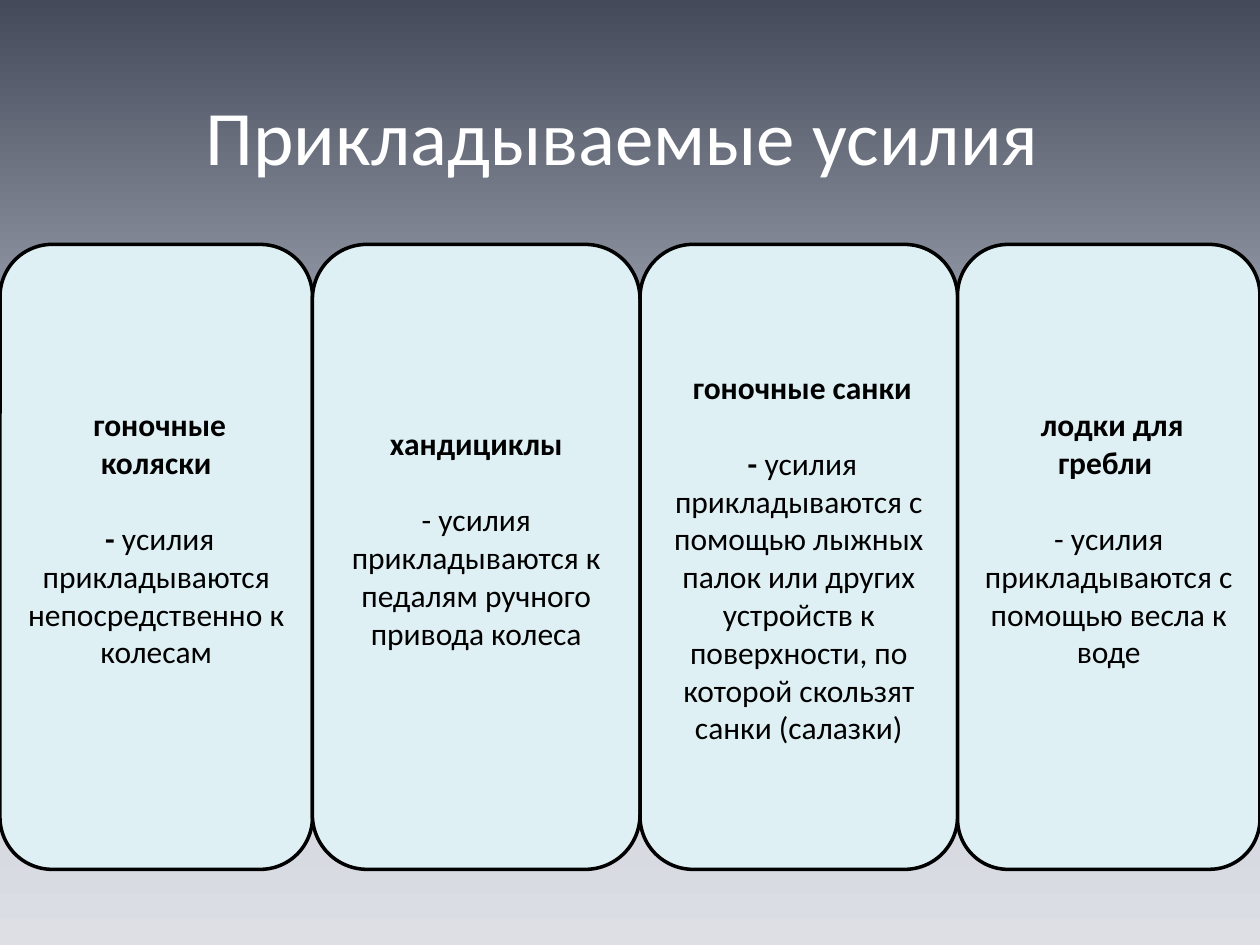
import copy

import pptx
import pptx.dml.color
import pptx.enum.shapes
import pptx.enum.text
import pptx.oxml.ns
import pptx.util

Inches, Pt = pptx.util.Inches, pptx.util.Pt
RGBColor = pptx.dml.color.RGBColor

WHITE = RGBColor(0xFF, 0xFF, 0xFF)
BLACK = RGBColor(0x00, 0x00, 0x00)
CARD_FILL = RGBColor(0xDF, 0xF0, 0xF5)
BACKGROUND = [
    (0, RGBColor(0x44, 0x4A, 0x5A)),
    (0.5, RGBColor(0xBA, 0xC0, 0xCC)),
    (1, RGBColor(0xDD, 0xDF, 0xE5)),
]

TITLE_FONT = {"name": "Calibri", "size": Pt(44)}
BODY_FONT = {"name": "Calibri", "size": Pt(18)}
LINE_GAP = Pt(22)
CARD_TOP, CARD_HEIGHT = 1.94, 4.96

# Width, heading, dash, its weight, description, extra space at the bottom
CARDS = [
    (2.48, " гоночные коляски", " - ", True,
     "усилия прикладываются непосредственно к колесам", LINE_GAP),
    (2.6, " хандициклы ", "- ", False,
     "усилия прикладываются к педалям ручного привода колеса", LINE_GAP),
    (2.52, " гоночные санки", " - ", True,
     "усилия прикладываются с помощью лыжных палок или других устройств "
     "к поверхности, по которой скользят санки (салазки)", 0),
    (2.4, " лодки для гребли ", "- ", False,
     "усилия прикладываются с помощью весла к воде", LINE_GAP),
]


def set_background(s):
    fill = s.background.fill
    fill.gradient()
    fill.gradient_angle = 270
    # A new gradient has two stops; add the middle one
    stops = s.element.find(".//" + pptx.oxml.ns.qn("a:gsLst"))
    stops.insert(1, copy.deepcopy(stops[0]))
    for stop, (position, color) in zip(fill.gradient_stops, BACKGROUND):
        stop.position = position
        stop.color.rgb = color


def add_run(p, text, font, color, bold=False):
    r = p.add_run()
    r.text = text
    for name, value in {**font, "bold": bold}.items():
        setattr(r.font, name, value)
    r.font.color.rgb = color


def prepare_text(sp):
    tf = sp.text_frame
    tf.word_wrap = True
    tf.vertical_anchor = pptx.enum.text.MSO_ANCHOR.MIDDLE
    return tf


def add_title(s, text):
    sp = s.shapes.add_textbox(Inches(0.51), Inches(0.44), Inches(9), Inches(1.25))
    p = prepare_text(sp).paragraphs[0]
    p.alignment = pptx.enum.text.PP_ALIGN.CENTER
    add_run(p, text, TITLE_FONT, WHITE)


def add_card(s, left, width, heading, dash, dash_bold, description, bottom_gap):
    sp = s.shapes.add_shape(
        pptx.enum.shapes.MSO_SHAPE.ROUNDED_RECTANGLE,
        Inches(left), Inches(CARD_TOP), Inches(width), Inches(CARD_HEIGHT))
    sp.shadow.inherit = False
    sp.fill.solid()
    sp.fill.fore_color.rgb = CARD_FILL
    sp.line.color.rgb = BLACK
    sp.line.width = Pt(2)

    tf = prepare_text(sp)
    tf.margin_bottom = Inches(0.05) + bottom_gap
    title, body = tf.paragraphs[0], tf.add_paragraph()
    for p in (title, body):
        p.alignment = pptx.enum.text.PP_ALIGN.CENTER
    body.space_before = LINE_GAP
    add_run(title, heading, BODY_FONT, BLACK, bold=True)
    add_run(body, dash, BODY_FONT, BLACK, bold=dash_bold)
    add_run(body, description, BODY_FONT, BLACK)


def main():
    prs = pptx.Presentation()
    prs.slide_width, prs.slide_height = Inches(10), Inches(7.5)
    s = prs.slides.add_slide(prs.slide_layouts[6])

    set_background(s)
    add_title(s, "Прикладываемые усилия ")

    # Cards stand side by side across the slide
    left = 0
    for width, *content in CARDS:
        add_card(s, left, width, *content)
        left += width

    prs.save("out.pptx")


if __name__ == "__main__":
    main()
